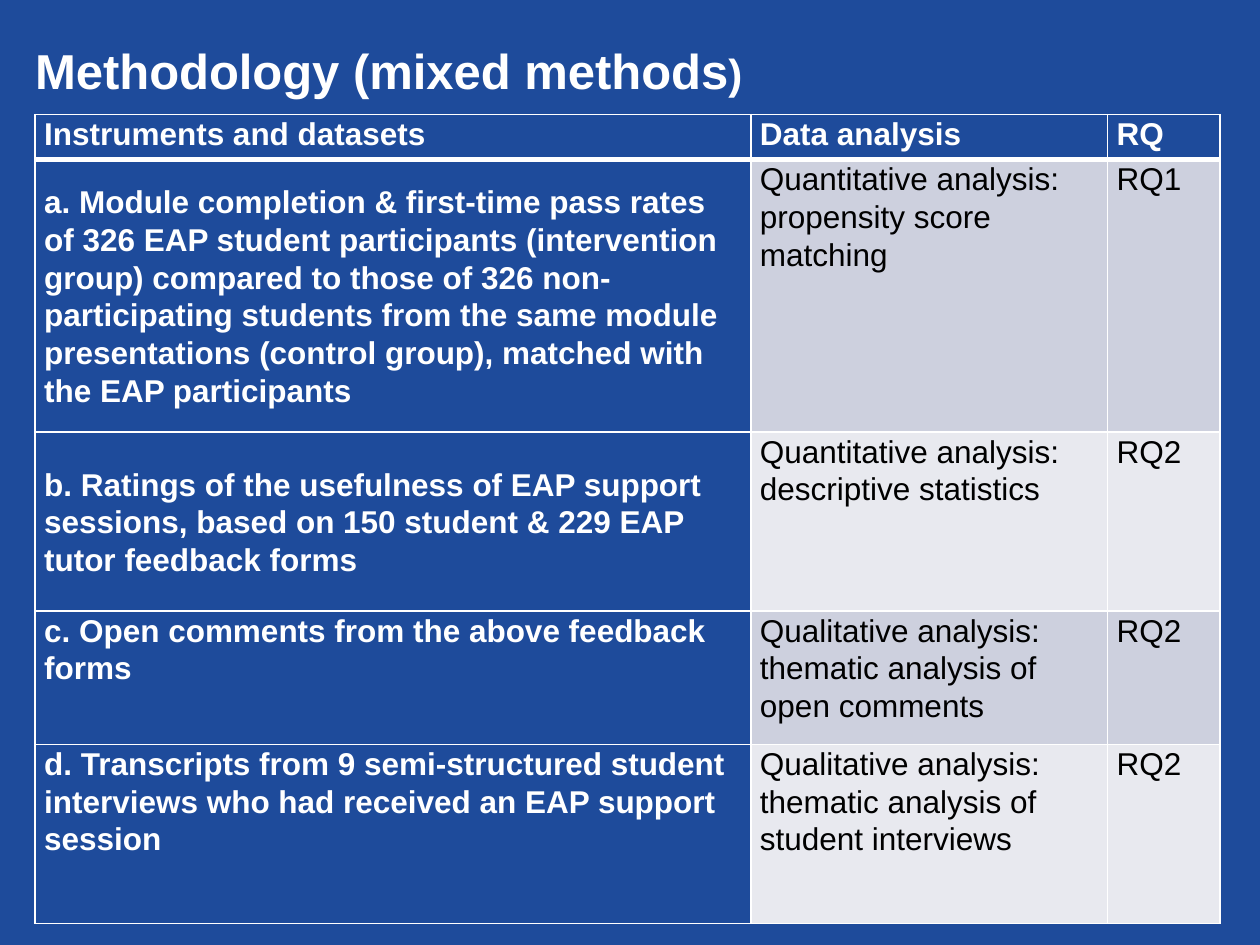
from lxml import etree
from pptx import Presentation
from pptx.dml.color import RGBColor
from pptx.enum.text import MSO_ANCHOR
from pptx.oxml.ns import qn
from pptx.util import Cm, Pt

TOP, MIDDLE, BOTTOM = MSO_ANCHOR.TOP, MSO_ANCHOR.MIDDLE, MSO_ANCHOR.BOTTOM
FONT = "Arial"
BLUE, WHITE, BLACK = "1E4B9B", "FFFFFF", "000000"
BANDS = ["CDD0DE", "E8E9EF"]

TITLE_RUNS = [("Methodology (mixed methods", 28), (")", 24)]
HEADER = ("Instruments and datasets", "Data analysis", "RQ")
STUDIES = [
    ("a. Module completion & first-time pass rates of 326 EAP student "
     "participants (intervention group) compared to those of 326 "
     "non-participating students from the same module presentations "
     "(control group), matched with the EAP participants",
     "Quantitative analysis: propensity score matching", "RQ1"),
    ("b. Ratings of the usefulness of EAP support sessions, based on "
     "150 student & 229 EAP tutor feedback forms",
     "Quantitative analysis: descriptive statistics", "RQ2"),
    ("c. Open comments from the above feedback forms",
     "Qualitative analysis: thematic analysis of open comments", "RQ2"),
    ("d. Transcripts from 9 semi-structured student interviews who had "
     "received an EAP support session",
     "Qualitative analysis: thematic analysis of student interviews", "RQ2"),
]
COLUMN_WIDTHS = [14.43, 7.19, 2.26]
ROW_HEIGHTS = [0.91, 5.49, 3.61, 2.69, 3.61]
CENTRED_ROWS = (1, 2)
LEFT = 0.71


def rgb(value):
    return RGBColor.from_string(value)


def style_font(font, size, color, bold):
    font.name, font.size, font.bold = FONT, Pt(size), bold
    font.color.rgb = rgb(color)


def add_borders(cell, top, bottom):
    """Draw white cell edges; call before filling, as the schema needs lines first."""
    properties = cell._tc.get_or_add_tcPr()
    for edge, width in (("lnL", 1), ("lnR", 1), ("lnT", top), ("lnB", bottom)):
        line = etree.SubElement(properties, qn(f"a:{edge}"), w=str(Pt(width)))
        fill = etree.SubElement(line, qn("a:solidFill"))
        etree.SubElement(fill, qn("a:srgbClr"), val=WHITE)


def add_title(slide):
    box = slide.shapes.add_textbox(Cm(LEFT), Cm(-0.48), Cm(19.23), Cm(3.25))
    frame = box.text_frame
    frame.word_wrap = True
    frame.vertical_anchor = BOTTOM
    frame.margin_left = frame.margin_right = frame.margin_top = 0
    frame.margin_bottom = Cm(0.76)
    paragraph = frame.paragraphs[0]
    paragraph.line_spacing = 0.9
    for text, size in TITLE_RUNS:
        run = paragraph.add_run()
        run.text = text
        style_font(run.font, size, WHITE, True)


def fill_cell(cell, text, row, column):
    is_heading = row == 0 or column == 0
    add_borders(cell, top=3 if row == 1 else 1, bottom=3 if row == 0 else 1)
    cell.fill.solid()
    cell.fill.fore_color.rgb = rgb(BLUE if is_heading else BANDS[(row - 1) % 2])
    cell.margin_left = cell.margin_right = Cm(0.18)
    cell.margin_top = cell.margin_bottom = 0
    centred = column == 0 and row in CENTRED_ROWS
    cell.vertical_anchor = MIDDLE if centred else TOP
    cell.text = text
    paragraph = cell.text_frame.paragraphs[0]
    paragraph.line_spacing = 1.07
    paragraph.space_after = Pt(8)
    style_font(paragraph.font, 18, WHITE if is_heading else BLACK, is_heading)


def add_methods_table(slide):
    rows = [HEADER, *STUDIES]
    table = slide.shapes.add_table(
        len(rows), len(HEADER), Cm(LEFT), Cm(2.31),
        Cm(sum(COLUMN_WIDTHS)), Cm(sum(ROW_HEIGHTS))).table
    for column, width in zip(table.columns, COLUMN_WIDTHS):
        column.width = Cm(width)
    for row, height in zip(table.rows, ROW_HEIGHTS):
        row.height = Cm(height)
    for r, texts in enumerate(rows):
        for c, text in enumerate(texts):
            fill_cell(table.cell(r, c), text, r, c)


def main():
    presentation = Presentation()
    presentation.slide_width, presentation.slide_height = Cm(25.4), Cm(19.05)
    slide = presentation.slides.add_slide(presentation.slide_layouts[6])
    slide.background.fill.solid()
    slide.background.fill.fore_color.rgb = rgb(BLUE)
    add_title(slide)
    add_methods_table(slide)
    presentation.save("out.pptx")


if __name__ == "__main__":
    main()
